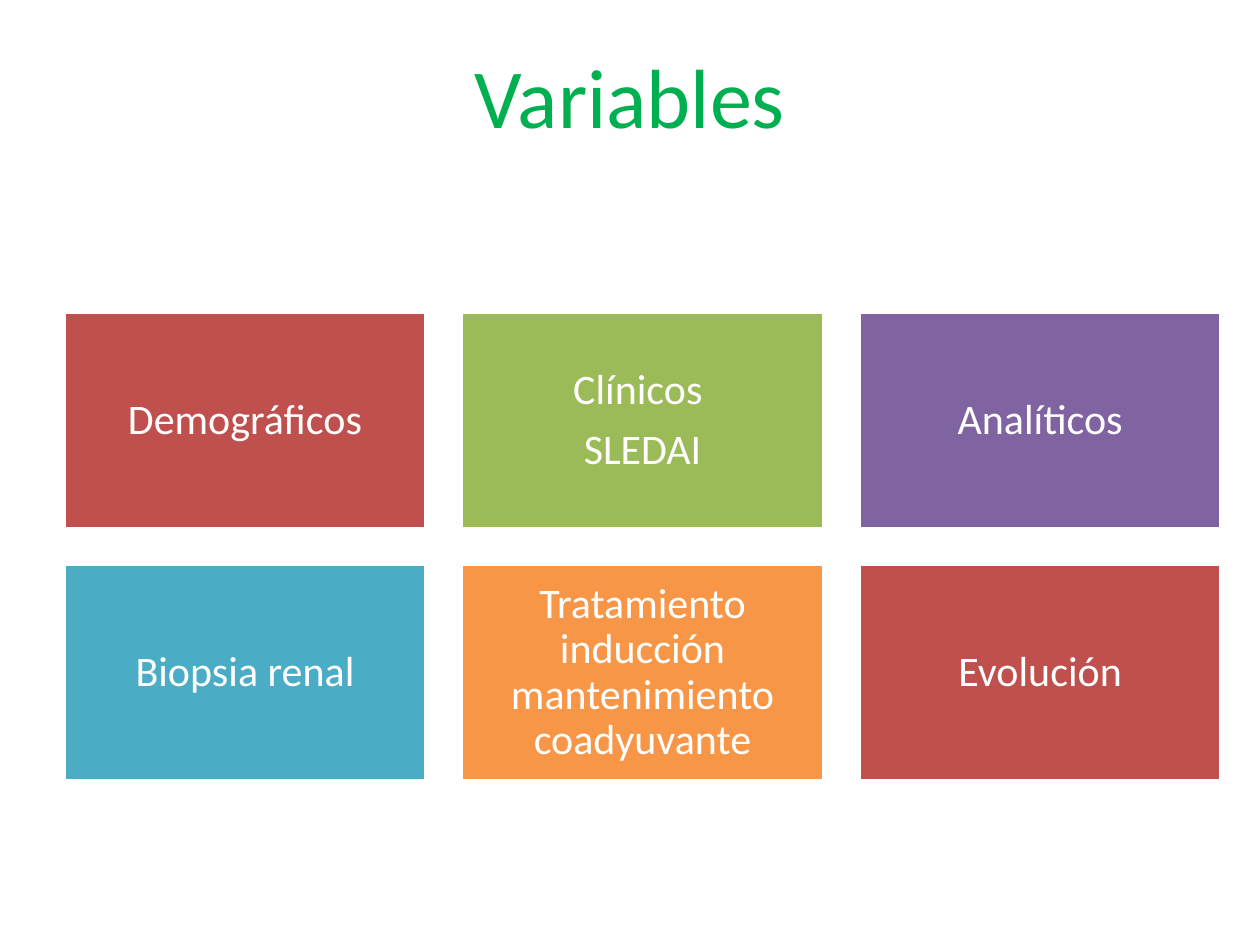
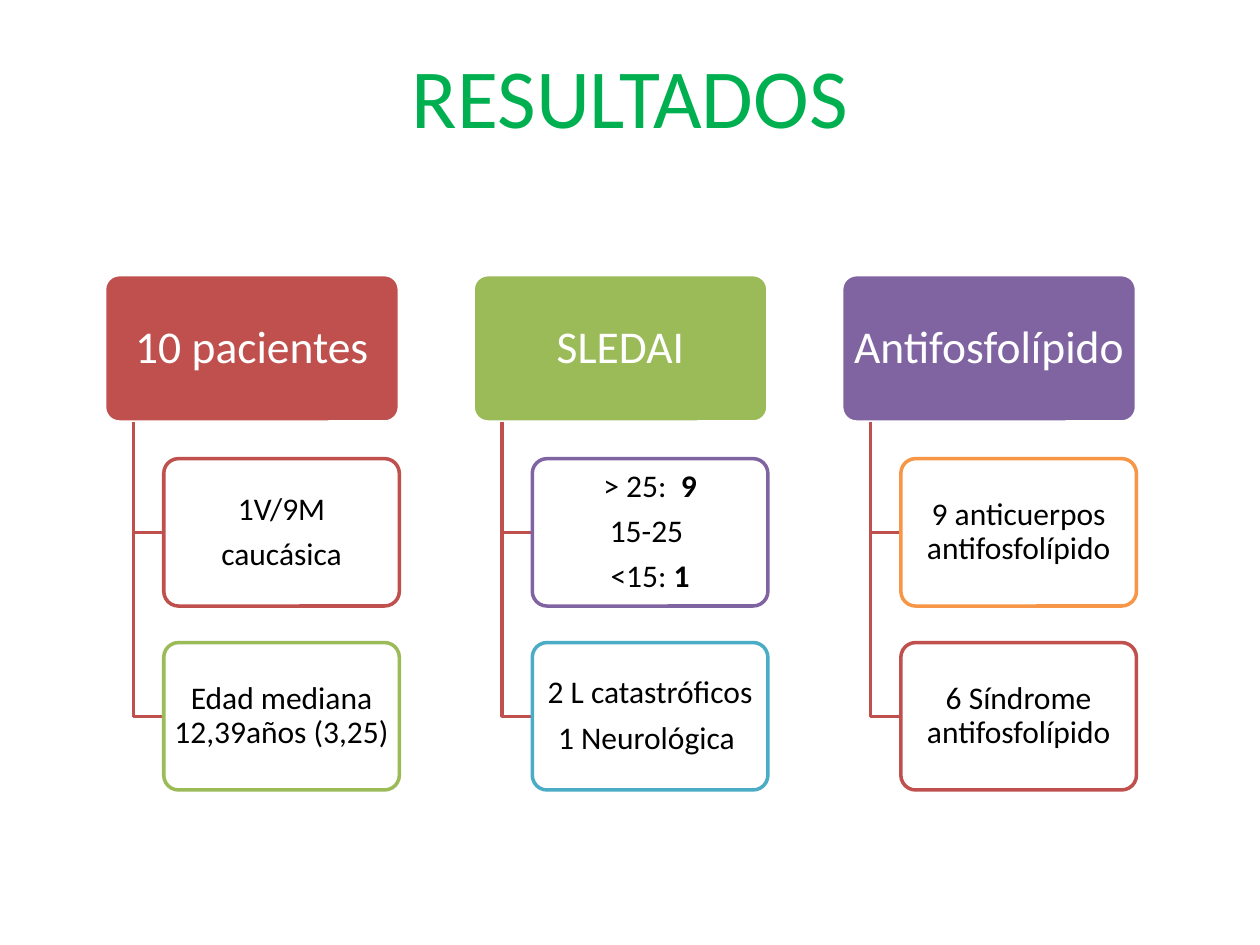
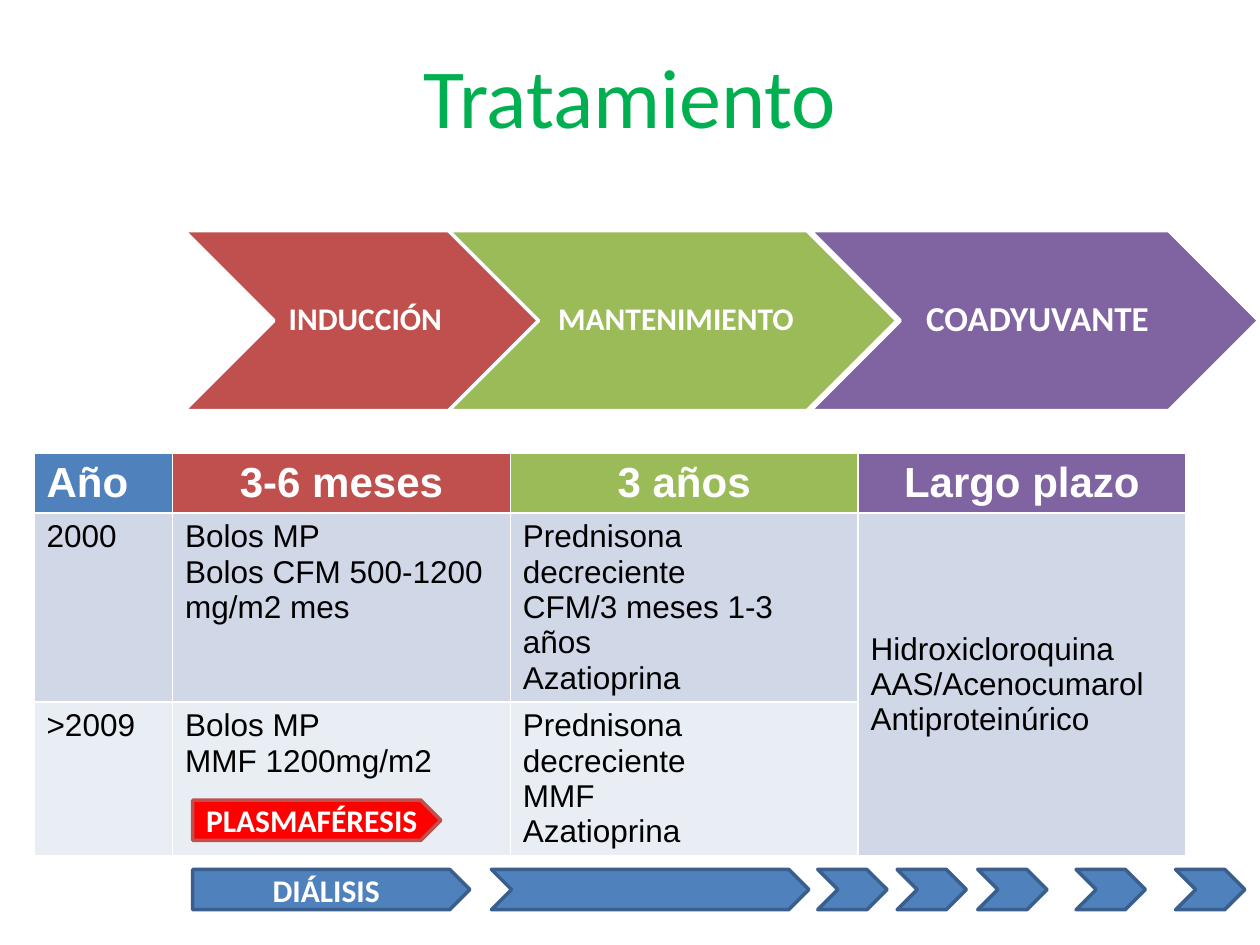
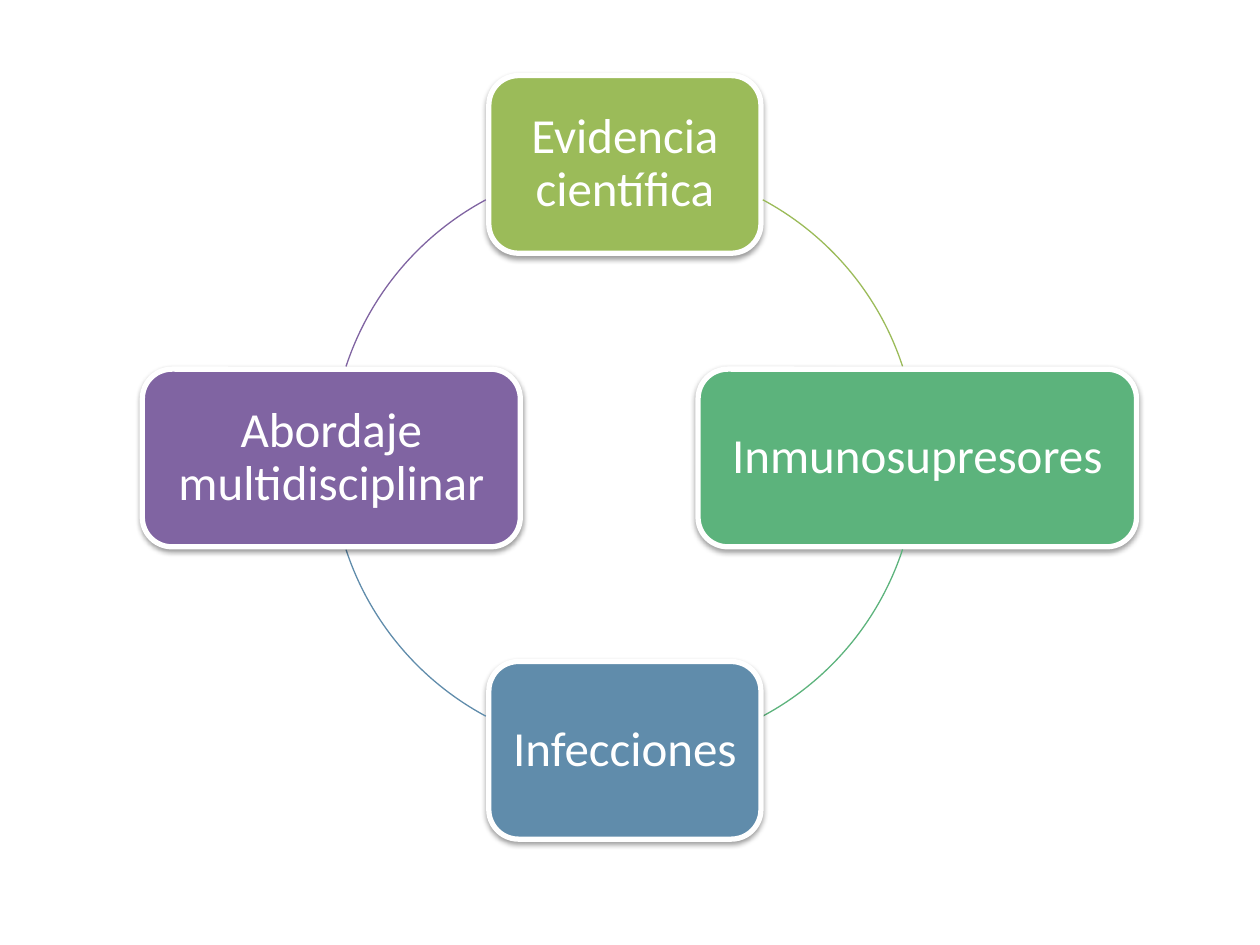
from lxml import etree
from pptx import Presentation
from pptx.dml.color import RGBColor
from pptx.enum.shapes import MSO_SHAPE
from pptx.enum.text import MSO_ANCHOR, PP_ALIGN
from pptx.oxml.ns import qn
from pptx.util import Inches, Pt

RECT, ROUND = MSO_SHAPE.RECTANGLE, MSO_SHAPE.ROUNDED_RECTANGLE
CHEVRON, PLATE, ARC = MSO_SHAPE.CHEVRON, MSO_SHAPE.PENTAGON, MSO_SHAPE.ARC
LEFT, CENTER = PP_ALIGN.LEFT, PP_ALIGN.CENTER
TOP, MIDDLE = MSO_ANCHOR.TOP, MSO_ANCHOR.MIDDLE

COLORS = {
    "title": "00B050", "white": "FFFFFF", "black": "000000",
    "blue": "4F81BD", "navy": "3A5F8C", "red": "C0504D", "green": "9BBB59",
    "purple": "8064A2", "aqua": "4BACC6", "orange": "F79646",
    "bright": "FF0000", "emerald": "5CB37C", "steel": "608CAB",
    "band": "D0D8E8", "pale": "E9EDF4",
}
COLORS = {name: RGBColor.from_string(code) for name, code in COLORS.items()}


def write_text(frame, text, size=18, color="white", bold=False, font="Calibri",
               align=CENTER, line=None, after=0):
    """Fill a frame: one paragraph a line, with **bold** spans."""
    for number, row in enumerate(text.split("\n")):
        para = frame.paragraphs[0] if number == 0 else frame.add_paragraph()
        para.alignment = align
        para.line_spacing = line
        para.space_after = Pt(after)
        for index, piece in enumerate(row.split("**")):
            if piece:
                span = para.add_run()
                span.text = piece
                span.font.name = font
                span.font.size = Pt(size)
                span.font.bold = bold or index % 2 == 1
                span.font.color.rgb = COLORS[color]


def add_box(page, kind, place, fill, edge="white", weight=2, text="",
            margins=(0.03, 0.03), **style):
    """Add a flat shape with centred text; place is left, top, width, height."""
    box = page.shapes.add_shape(kind, *[Inches(value) for value in place])
    box.shadow.inherit = False
    box.fill.solid()
    box.fill.fore_color.rgb = COLORS[fill]
    box.line.color.rgb = COLORS[edge]
    box.line.width = Pt(weight)
    frame = box.text_frame
    frame.word_wrap = True
    frame.vertical_anchor = MIDDLE
    frame.margin_left, frame.margin_right = [Inches(value) for value in margins]
    frame.margin_top = frame.margin_bottom = 0
    if text:
        write_text(frame, text, **style)
    return box


deck = Presentation()
deck.slide_width, deck.slide_height = Inches(10), Inches(7.5)

# Pages and shared title style
pages = []
for heading in ["Variables", "RESULTADOS", "Tratamiento", None]:
    page = deck.slides.add_slide(deck.slide_layouts[5 if heading else 6])
    pages.append(page)
    if heading:
        title = page.shapes.title
        title.left, title.top = Inches(0.5), Inches(0.3)
        title.width, title.height = Inches(9), Inches(1.25)
        title.text_frame.vertical_anchor = TOP
        write_text(title.text_frame, heading, size=48, color="title")
variables, results, treatment, cycle = pages

# Variables: grid of three by two
groups = [
    ("Demográficos", "red"), ("Clínicos \nSLEDAI", "green"),
    ("Analíticos", "purple"), ("Biopsia renal", "aqua"),
    ("Tratamiento inducción mantenimiento coadyuvante", "orange"),
    ("Evolución", "red"),
]
for index, (text, fill) in enumerate(groups):
    row, column = divmod(index, 3)
    place = (0.51 + 3.155 * column, 2.48 + 2 * row, 2.87, 1.72)
    add_box(variables, RECT, place, fill, text=text, margins=(0.1, 0.1),
            size=24, line=0.9, after=8.4)

# Results: three heads, each with two linked boxes
branches = [
    ("10 pacientes", "red",
     [("1V/9M\ncaucásica", "red"),
      ("Edad mediana 12,39años (3,25)", "green")]),
    ("SLEDAI", "green",
     [("> 25:  **9**\n15-25 \n<15: **1**", "purple"),
      ("2 L catastróficos\n1 Neurológica ", "aqua")]),
    ("Antifosfolípido", "purple",
     [("9 anticuerpos antifosfolípido", "orange"),
      ("6 Síndrome antifosfolípido", "red")]),
]
height = 1.17
for column, (head, fill, children) in enumerate(branches):
    left, top = 0.83 + 2.925 * column, 2.18
    box = add_box(results, ROUND, (left, top, 2.34, height), fill, text=head,
                  size=26, line=0.9, after=9.1)
    box.adjustments[0] = 0.1
    for step, (text, edge) in enumerate(children, start=1):
        child_top = top + 1.46 * step
        stem, end = Inches(left + 0.23), Inches(left + 0.47)
        middle = Inches(child_top + height / 2)
        builder = results.shapes.build_freeform(stem, Inches(top + height))
        builder.add_line_segments([(stem, middle), (end, middle)], close=False)
        elbow = builder.convert_to_shape()
        elbow.shadow.inherit = False
        elbow.fill.background()
        elbow.line.color.rgb = COLORS["red"]
        elbow.line.width = Pt(2)
        box = add_box(results, ROUND, (left + 0.47, child_top, 1.87, height),
                      "white", edge, text=text, color="black",
                      line=0.9, after=6.3)
        box.adjustments[0] = 0.1

# Treatment: phases
phases = [
    ("INDUCCIÓN", "red", 1.46, 2.83, 18),
    ("MANTENIMIENTO", "green", 3.56, 3.56, 18),
    ("COADYUVANTE", "purple", 6.43, 3.56, 20),
]
for text, fill, left, width, size in phases:
    add_box(treatment, CHEVRON, (left, 1.83, width, 1.43), fill, text=text,
            margins=(0.08, 0.03), size=size, bold=True, line=0.9,
            after=0.35 * size)

# Treatment: table, whose rows grow with their text
rows = [
    ["Año", "3-6 meses", "3 años", "Largo plazo"],
    ["2000", "Bolos MP\nBolos CFM 500-1200 mg/m2 mes",
     "Prednisona decreciente\nCFM/3 meses 1-3 años\nAzatioprina",
     "Hidroxicloroquina\nAAS/Acenocumarol\nAntiproteinúrico"],
    [">2009", "Bolos MP\nMMF 1200mg/m2",
     "Prednisona decreciente\nMMF\nAzatioprina", ""],
]
fills = [["blue", "red", "green", "purple"], ["band"] * 4, ["pale"] * 4]
table = treatment.shapes.add_table(3, 4, Inches(0.27), Inches(3.6),
                                   Inches(9.14), Inches(1.23)).table
for column, width in enumerate([1.1, 2.68, 2.76, 2.6]):
    table.columns[column].width = Inches(width)
table.cell(1, 3).merge(table.cell(2, 3))
table.cell(1, 3).vertical_anchor = MIDDLE
for row, texts in enumerate(rows):
    for column, text in enumerate(texts):
        cell = table.cell(row, column)
        cell.fill.solid()
        cell.fill.fore_color.rgb = COLORS[fills[row][column]]
        header = row == 0
        if text:
            write_text(cell.text_frame, text, font="Arial", bold=header,
                       size=24 if header else 18,
                       color="white" if header else "black",
                       align=CENTER if header and column else LEFT)

# Treatment: plasmapheresis and dialysis arrows
add_box(treatment, PLATE, (1.53, 6.35, 1.97, 0.32), "bright", "red",
        text="PLASMAFÉRESIS", bold=True)
add_box(treatment, PLATE, (1.53, 6.9, 2.2, 0.32), "blue", "navy",
        text="DIÁLISIS", bold=True)
arrows = [(3.9, 2.52)] + [(left, 0.55) for left in (6.49, 7.12, 7.76, 8.54, 9.33)]
for left, width in arrows:
    add_box(treatment, CHEVRON, (left, 6.9, width, 0.32), "blue", "navy")

# Cycle: boxes clockwise from the top, each followed by an arc.
# Arc angles run clockwise from the right, between the edges of two boxes.
stations = [
    ("Evidencia científica", "green", 3.88, 0.6, 2.16, 298.2, 341.8),
    ("Inmunosupresores", "emerald", 5.54, 2.93, 3.48, 18.2, 61.8),
    ("Infecciones", "steel", 3.88, 5.25, 2.16, 118.2, 161.8),
    ("Abordaje multidisciplinar", "purple", 1.13, 2.93, 3, 198.2, 241.8),
]
for text, color, left, top, width, start, end in stations:
    box = add_box(cycle, ROUND, (left, top, width, 1.41), color, weight=3,
                  text=text, size=28, line=0.9, after=9.8)
    effects = box._element.spPr.find(qn("a:effectLst"))
    shadow = etree.SubElement(effects, qn("a:outerShdw"), blurRad=str(Pt(3.1)),
                              dist=str(Pt(1.6)), dir="5400000", rotWithShape="0")
    tint = etree.SubElement(shadow, qn("a:srgbClr"), val=str(COLORS["black"]))
    etree.SubElement(tint, qn("a:alpha"), val="38000")

    arc = cycle.shapes.add_shape(ARC, Inches(2.63), Inches(1.31),
                                 Inches(4.65), Inches(4.65))
    arc.adjustments[0] = start * 0.6  # one degree is 0.6 adjustment units
    arc.adjustments[1] = end * 0.6
    arc.shadow.inherit = False
    arc.fill.background()
    arc.line.color.rgb = COLORS[color]
    arc.line.width = Pt(0.75)

deck.save("out.pptx")
